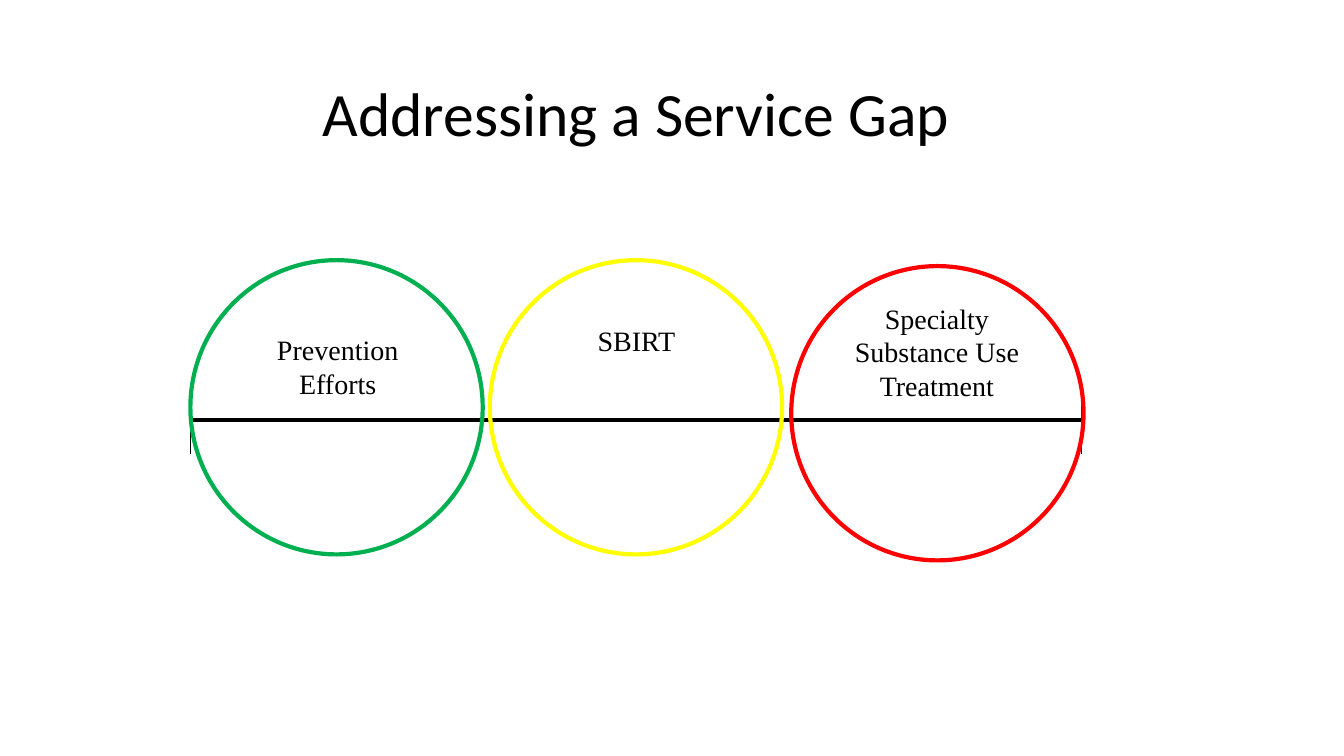
import pptx
import pptx.util
import pptx.dml.color
import pptx.enum.shapes
import pptx.enum.text
import lxml.etree

Pt = pptx.util.Pt

COLORS = {"black": "000000", "green": "00B050", "yellow": "FFFF00", "red": "FF0000"}
HEADING = "Addressing a Service Gap"
HEADING_BOX = (136, 31, 637, 104.4)
SERVICES = [
    {"label": "Prevention Efforts", "color": "green", "circle": (136, 185.8),
     "box": (184.3, 234, 113.8, 55.4)},
    {"label": "SBIRT", "color": "yellow", "circle": (349.9, 185.8),
     "box": (375.1, 227.5, 159.1, 31.7)},
    {"label": "Specialty Substance Use Treatment", "color": "red", "circle": (565.2, 190.1),
     "box": (589.7, 211.7, 159.1, 79.9)},
]
CIRCLE_SIZE = (208.8, 210.2)
AXIS_LEFT, AXIS_RIGHT, AXIS_Y = 136, 772.6, 300.2
TICK_REACH = 24.1


def rgb(name):
    return pptx.dml.color.RGBColor.from_string(COLORS[name])


def write(frame, text, font, size, color="black", anchor="TOP", spacing=None):
    frame.word_wrap = True
    frame.vertical_anchor = pptx.enum.text.MSO_ANCHOR[anchor]
    paragraph = frame.paragraphs[0]
    paragraph.alignment = pptx.enum.text.PP_ALIGN.CENTER
    if spacing:
        paragraph.line_spacing = spacing
    run = paragraph.add_run()
    run.text = text
    run.font.name = font
    run.font.size = Pt(size)
    run.font.color.rgb = rgb(color)


def draw_line(slide, x1, y1, x2, y2, width):
    line = slide.shapes.add_connector(
        pptx.enum.shapes.MSO_CONNECTOR.STRAIGHT, Pt(x1), Pt(y1), Pt(x2), Pt(y2))
    line.line.color.rgb = rgb("black")
    line.line.width = Pt(width)
    lxml.etree.SubElement(line._element.spPr, pptx.oxml.ns.qn("a:effectLst"))


def draw_service(slide, service):
    label = slide.shapes.add_textbox(*map(Pt, service["box"]))
    write(label.text_frame, service["label"], "Times New Roman", 20)
    circle = slide.shapes.add_shape(
        pptx.enum.shapes.MSO_SHAPE.OVAL, *map(Pt, service["circle"] + CIRCLE_SIZE))
    circle.shadow.inherit = False
    circle.fill.background()
    circle.line.color.rgb = rgb(service["color"])
    circle.line.width = Pt(3)


def main():
    deck = pptx.Presentation()
    deck.slide_width, deck.slide_height = Pt(960), Pt(540)
    slide = deck.slides.add_slide(deck.slide_layouts[5])

    heading = slide.shapes.title
    heading.left, heading.top, heading.width, heading.height = map(Pt, HEADING_BOX)
    write(heading.text_frame, HEADING, "Calibri", 44, anchor="MIDDLE", spacing=0.9)

    draw_line(slide, AXIS_LEFT, AXIS_Y, AXIS_RIGHT, AXIS_Y, 3)
    for x in (AXIS_LEFT, AXIS_RIGHT):
        draw_line(slide, x, AXIS_Y - TICK_REACH, x, AXIS_Y + TICK_REACH, 0.75)
    for service in SERVICES:
        draw_service(slide, service)

    deck.save("out.pptx")


if __name__ == "__main__":
    main()
